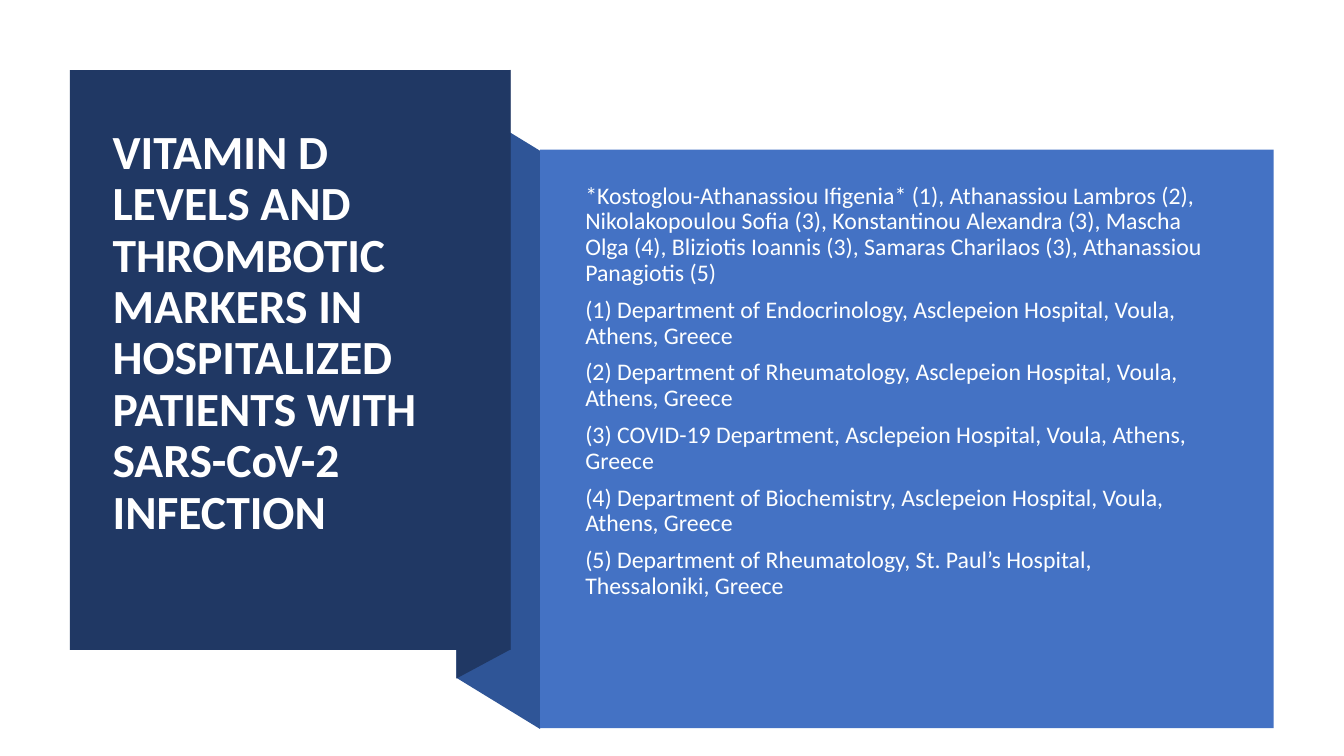
"""Build the title slide of a study on vitamin D and thrombotic markers."""
from pptx import Presentation
from pptx.dml.color import RGBColor
from pptx.enum.shapes import MSO_SHAPE
from pptx.enum.text import MSO_ANCHOR, PP_ALIGN
from pptx.util import Cm, Pt


def paint(sp, color):
    sp.shadow.inherit = False
    sp.fill.solid()
    sp.fill.fore_color.rgb = RGBColor.from_string(color)
    sp.line.fill.background()


def add_text(box, anchor, lines, size, color, bold, after):
    tf = slide.shapes.add_textbox(*map(Cm, box)).text_frame
    tf.word_wrap = True
    tf.vertical_anchor = anchor
    tf.margin_top = tf.margin_bottom = 0
    tf.text = "\n".join(lines)
    for p in tf.paragraphs:
        p.alignment = PP_ALIGN.LEFT
        p.line_spacing = 0.9
        p.space_after = Pt(after)
        for r in p.runs:
            r.font.name = "Calibri"
            r.font.size = Pt(size)
            r.font.bold = bold
            r.font.color.rgb = RGBColor.from_string(color)


prs = Presentation()
prs.slide_width, prs.slide_height = Cm(33.87), Cm(19.05)
slide = prs.slides.add_slide(prs.slide_layouts[6])

folds = [
    ([(13.61, 18.37), (11.5, 17.08), (11.5, 2.51), (13.61, 3.8)], "2F5597"),
    ([(12.86, 16.37), (11.5, 17.1), (11.5, 2.49), (12.86, 1.76)], "203864"),
]
for points, color in folds:
    (x, y), *rest = [(Cm(px), Cm(py)) for px, py in points]
    fb = slide.shapes.build_freeform(x, y)
    fb.add_line_segments(rest, close=True)
    paint(fb.convert_to_shape(), color)

panels = [
    ((1.76, 1.77, 11.11, 14.61), "203864"),
    ((13.61, 3.77, 18.49, 14.58), "4472C4"),
]
for box, color in panels:
    paint(slide.shapes.add_shape(MSO_SHAPE.RECTANGLE, *map(Cm, box)), color)

title = ["VITAMIN D LEVELS AND THROMBOTIC MARKERS IN HOSPITALIZED PATIENTS "
         "WITH SARS-CoV-2 INFECTION"]
authors = [
    "*Kostoglou-Athanassiou Ifigenia* (1), Athanassiou Lambros (2), "
    "Nikolakopoulou Sofia (3), Konstantinou Alexandra (3), Mascha Olga (4), "
    "Bliziotis Ioannis (3), Samaras Charilaos (3), Athanassiou Panagiotis (5)",
    "(1) Department of Endocrinology, Asclepeion Hospital, Voula, Athens, Greece",
    "(2) Department of Rheumatology, Asclepeion Hospital, Voula, Athens, Greece",
    "(3) COVID-19 Department, Asclepeion Hospital, Voula, Athens, Greece",
    "(4) Department of Biochemistry, Asclepeion Hospital, Voula, Athens, Greece",
    "(5) Department of Rheumatology, St. Paul’s Hospital, Thessaloniki, Greece",
]
add_text((2.59, 2.72, 9.42, 11.38), MSO_ANCHOR.MIDDLE, title, 34, "FFFFFF", True, 0)
add_text((14.5, 4.63, 16.54, 12.04), MSO_ANCHOR.TOP, authors, 17, "FEFFFF", False, 8)

prs.save("out.pptx")
